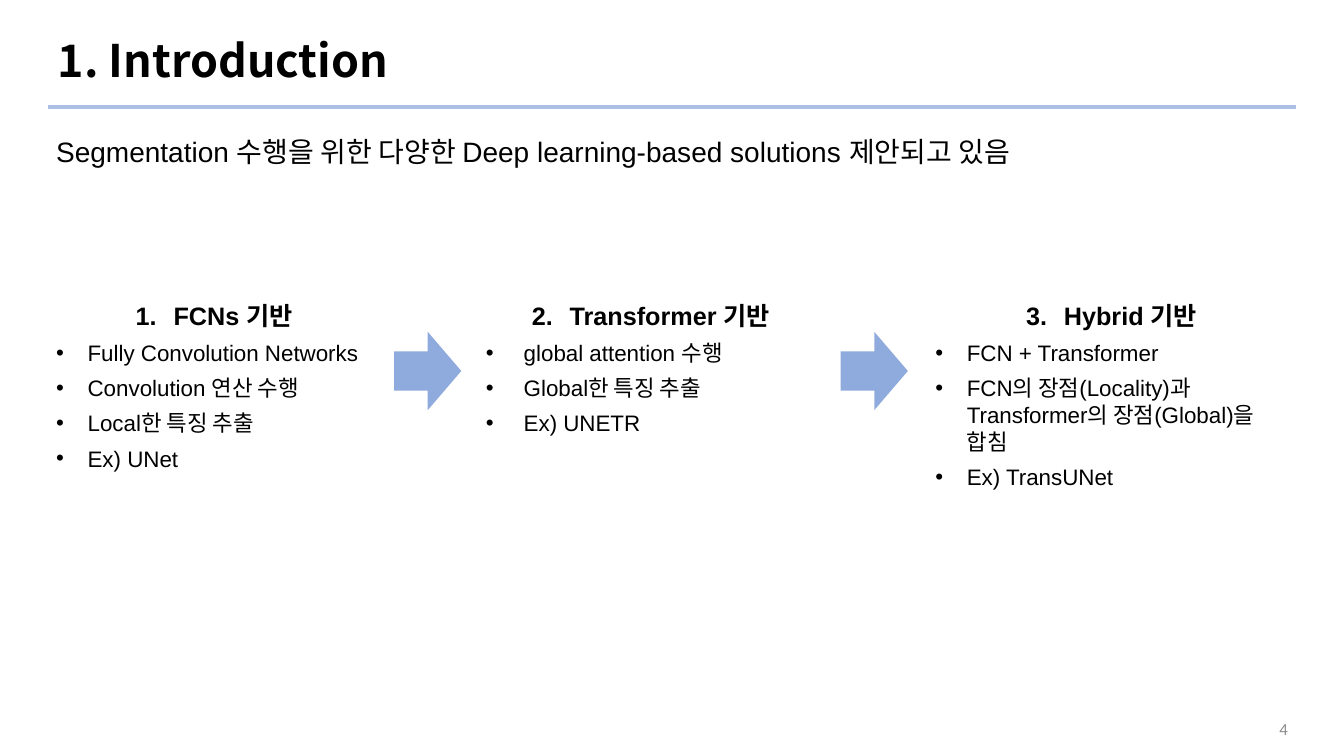
from pptx import Presentation
from pptx.dml.color import RGBColor
from pptx.enum.shapes import MSO_CONNECTOR, MSO_SHAPE
from pptx.enum.text import MSO_ANCHOR, MSO_AUTO_SIZE, PP_ALIGN
from pptx.oxml.ns import qn
from pptx.util import Pt
from lxml import etree

LEFT, MID, RIGHT = PP_ALIGN.LEFT, PP_ALIGN.CENTER, PP_ALIGN.RIGHT
CENTER, TOP = MSO_ANCHOR.MIDDLE, MSO_ANCHOR.TOP
FIXED = MSO_AUTO_SIZE.NONE
ARROW, LINE = MSO_SHAPE.RIGHT_ARROW, MSO_CONNECTOR.STRAIGHT
KOREAN = "Noto Sans CJK KR"

HEAD = dict(name=KOREAN, size=Pt(32), bold=True)
LEAD = dict(name="Arial", size=Pt(20), bold=False)
NAME = dict(name="Arial", size=Pt(18), bold=True)
ITEM = dict(name="Arial", size=Pt(16), bold=False)
PAGE = dict(name="Calibri", size=Pt(12), bold=False)

# Left edge, width, item indent, heading, items
STEPS = [
    (33, 240, 22.5, "FCNs 기반",
     ["Fully Convolution Networks", "Convolution 연산 수행",
      "Local한 특징 추출", "Ex) UNet"]),
    (340, 250, 27, "Transformer 기반",
     ["global attention 수행", "Global한 특징 추출", "Ex) UNETR"]),
    (661, 266, 22.5, "Hybrid 기반",
     ["FCN + Transformer",
      "FCN의 장점(Locality)과 Transformer의 장점(Global)을 합침",
      "Ex) TransUNet"]),
]
ARROWS = [281.5, 600.5]


def color(code):
    return RGBColor.from_string(code)


def place(shape, box):
    for key, val in zip(("left", "top", "width", "height"), box):
        setattr(shape, key, Pt(val))


def write(para, text, form, align=LEFT, after=0, tint="000000"):
    para.alignment = align
    para.space_before, para.space_after = Pt(0), Pt(after)
    run = para.add_run()
    run.text = text
    for key, val in form.items():
        setattr(run.font, key, val)
    run.font.color.rgb = color(tint)
    east = etree.SubElement(run.font._element, qn("a:ea"))
    east.set("typeface", KOREAN)


def mark(para, indent, tag, **attrs):
    props = para._p.get_or_add_pPr()
    props.set("marL", str(Pt(indent)))
    props.set("indent", str(-Pt(indent)))
    if tag == "a:buChar":
        etree.SubElement(props, qn("a:buFont")).set("typeface", "Arial")
    bullet = etree.SubElement(props, qn(tag))
    for key, val in attrs.items():
        bullet.set(key, val)


def frame(slide, box, anchor=TOP):
    shape = slide.shapes.add_textbox(*map(Pt, box))
    shape.text_frame.word_wrap = True
    shape.text_frame.vertical_anchor = anchor
    return shape.text_frame


# Title with the rule below it
def header(slide, box, text):
    left, top, width, height = box
    title = slide.shapes.title
    place(title, box)
    body = title.text_frame
    body.auto_size, body.vertical_anchor = FIXED, CENTER
    para = body.paragraphs[0]
    write(para, text, HEAD)
    para.line_spacing = 0.9
    base = Pt(top + height + 1.5)
    rule = slide.shapes.add_connector(
        LINE, Pt(left), base, Pt(left + width), base)
    rule.line.color.rgb = color("ABC0E4")
    rule.line.width = Pt(3)
    etree.SubElement(rule._element.spPr, qn("a:effectLst"))


# Numbered heading over its bullets
def step(slide, box, num, name, items, indent):
    body = frame(slide, box)
    para = body.paragraphs[0]
    mark(para, 27, "a:buAutoNum", type="arabicPeriod", startAt=str(num))
    write(para, name, NAME, MID, 6)
    for item in items:
        para = body.add_paragraph()
        mark(para, indent, "a:buChar", char="•")
        write(para, item, ITEM, after=6)


# Arrow between two steps
def arrow(slide, box):
    shape = slide.shapes.add_shape(ARROW, *map(Pt, box))
    shape.shadow.inherit = False
    shape.fill.solid()
    shape.fill.fore_color.rgb = color("8FAADC")
    shape.line.fill.background()


def main():
    deck = Presentation()
    deck.slide_width, deck.slide_height = Pt(960), Pt(540)
    slide = deck.slides.add_slide(deck.slide_layouts[5])

    header(slide, (34, 15, 892, 60), "1. Introduction")

    # Lead sentence
    lead = frame(slide, (33, 92, 892, 32), CENTER)
    write(lead.paragraphs[0],
          "Segmentation 수행을 위한 다양한 Deep learning-based solutions 제안되고 있음",
          LEAD, after=12)

    # Three steps and the arrows that join them
    for num, (left, width, indent, name, items) in enumerate(STEPS, 1):
        step(slide, (left, 211, width, 150), num, name, items, indent)
    for left in ARROWS:
        arrow(slide, (left, 237, 48, 56))

    # Page number
    page = frame(slide, (678, 506, 249, 29), CENTER)
    write(page.paragraphs[0], "4", PAGE, RIGHT, tint="8C8C8C")

    deck.save("out.pptx")


if __name__ == "__main__":
    main()
